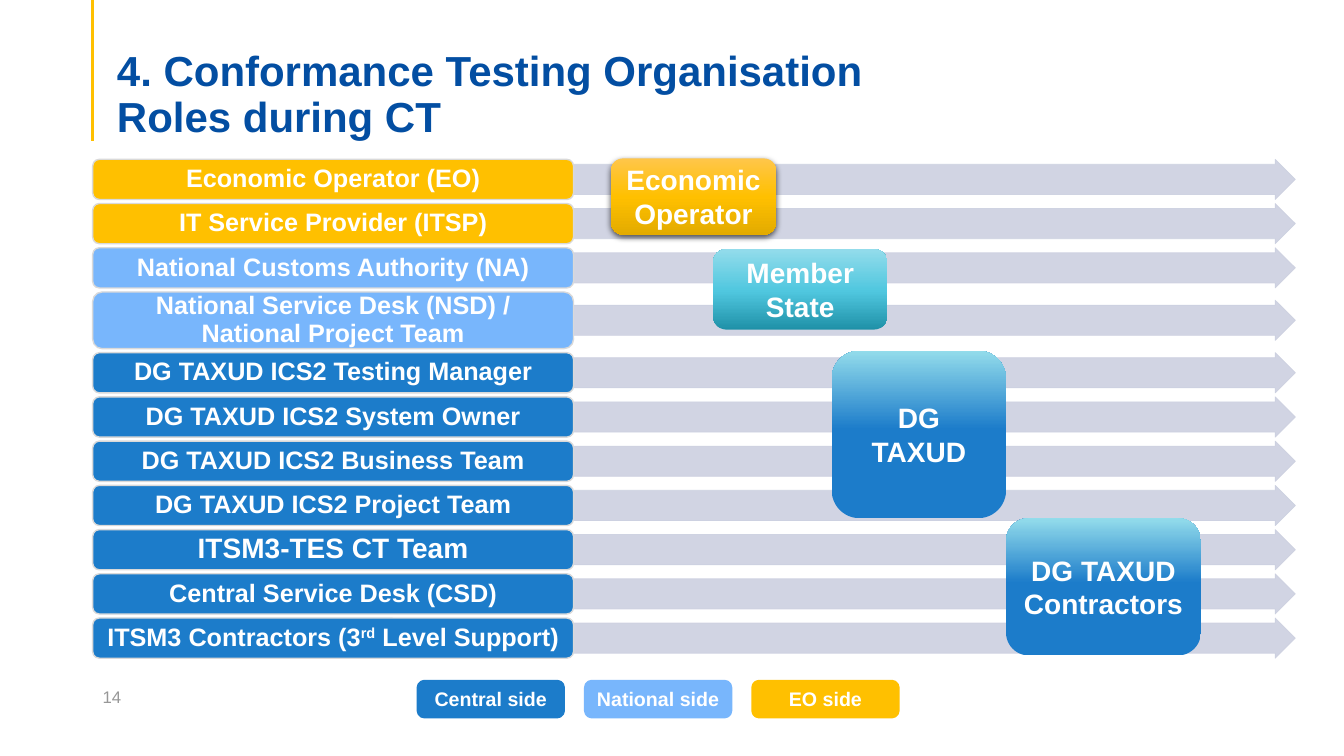
from copy import deepcopy

from lxml.etree import SubElement
from pptx import Presentation
from pptx.dml.color import RGBColor
from pptx.enum.shapes import MSO_CONNECTOR as Link, MSO_SHAPE as Form
from pptx.enum.text import MSO_ANCHOR as Anchor, MSO_AUTO_SIZE as Fit, PP_ALIGN as Align
from pptx.oxml.ns import qn
from pptx.util import Inches, Pt

COLOURS = {
    "central": "1C7CCA", "national": "78B6FC", "eo": "FFC000", "arrow": "CCD0E0",
    "edge": "D9D9D9", "white": "FFFFFF", "title": "034EA2", "number": "979797",
    "sky": "93DCEB", "teal": "50C7DF", "deep teal": "1F91A8",
    "light gold": "FFC64B", "dark gold": "E3AB00",
}
FORMATS = {
    "title": {
        "frame": {"vertical_anchor": Anchor.BOTTOM, "margin_bottom": 0},
        "para": {"alignment": Align.LEFT, "line_spacing": 0.9},
        "font": {"size": Pt(30), "bold": True}},
    "number": {
        "frame": {"vertical_anchor": Anchor.MIDDLE},
        "para": {"alignment": Align.LEFT},
        "font": {"size": Pt(12), "bold": False}},
    "role": {
        "frame": {"vertical_anchor": Anchor.MIDDLE, "margin_left": Pt(6), "margin_right": Pt(6),
                  "margin_top": Pt(3), "margin_bottom": Pt(3)},
        "para": {"alignment": Align.CENTER, "line_spacing": 0.9},
        "font": {"size": Pt(18), "bold": True}},
    "party": {
        "frame": {"vertical_anchor": Anchor.MIDDLE},
        "para": {"alignment": Align.CENTER},
        "font": {"size": Pt(20), "bold": True}},
    "legend": {
        "frame": {"vertical_anchor": Anchor.MIDDLE, "margin_left": Pt(2), "margin_right": Pt(2),
                  "margin_top": 0, "margin_bottom": 0},
        "para": {"alignment": Align.CENTER},
        "font": {"size": Pt(14), "bold": True}},
}
ROLES = [
    ("Economic Operator (EO)", "eo"),
    ("IT Service Provider (ITSP)", "eo"),
    ("National Customs Authority (NA)", "national"),
    ("National Service Desk (NSD) / National Project Team", "national"),
    ("DG TAXUD ICS2 Testing Manager", "central"),
    ("DG TAXUD ICS2 System Owner", "central"),
    ("DG TAXUD ICS2 Business Team", "central"),
    ("DG TAXUD ICS2 Project Team", "central"),
    ("ITSM3-TES CT Team", "central"),
    ("Central Service Desk (CSD)", "central"),
    ("ITSM3 Contractors (3^rd^ Level Support)", "central"),
]
TALL_ROLE, LARGE_ROLE = 3, 8
BLUE_FADE = [(0, "central"), (0.53, "central"), (1, "sky")]
PARTIES = [
    ("Member State", (53.05, 32.95, 12.98, 10.65),
     [(0, "deep teal"), (0.48, "teal"), (1, "sky")], 90),
    ("Economic Operator", (45.45, 20.95, 12.3, 10.1),
     [(0, "light gold"), (0.5, "eo"), (1, "dark gold")], 270),
    ("DG TAXUD", (61.88, 46.4, 12.98, 22.15), BLUE_FADE, 90),
    ("DG TAXUD\nContractors", (74.85, 68.55, 14.5, 18.15), BLUE_FADE, 90),
]
LEGEND = [("Central side", "central"), ("National side", "national"), ("EO side", "eo")]


def colour(name):
    return RGBColor.from_string(COLOURS[name])


def assign(target, values):
    for key, value in values.items():
        setattr(target, key, value)


class RolesSlide:
    """Draws elements on one slide, with lengths as percentages of its size."""

    def __init__(self, deck, font="Arial"):
        self.deck, self.font = deck, font
        self.page = deck.slides.add_slide(deck.slide_layouts[5])

    def place(self, left, top, width, height):
        x, y = self.deck.slide_width / 100, self.deck.slide_height / 100
        return [round(v) for v in (left * x, top * y, width * x, height * y)]

    def add_text(self, box, text, kind, ink="white", **changes):
        style = FORMATS[kind]
        frame = box.text_frame
        assign(frame, {"word_wrap": True, "auto_size": Fit.NONE, **style["frame"]})
        for index, line in enumerate(text.split("\n")):
            para = frame.add_paragraph() if index else frame.paragraphs[0]
            assign(para, {"space_before": Pt(0), **style["para"]})
            for order, part in enumerate(line.split("^")):
                span = para.add_run()
                span.text = part
                assign(span.font, {"name": self.font, **style["font"], **changes})
                span.font.color.rgb = colour(ink)
                if order % 2:
                    span.font._rPr.set("baseline", "30000")

    def title(self, text, area):
        box = self.page.shapes.title
        assign(box, dict(zip(("left", "top", "width", "height"), self.place(*area))))
        self.add_text(box, text, "title", "title")

    def label(self, text, area, kind, ink):
        self.add_text(self.page.shapes.add_textbox(*self.place(*area)), text, kind, ink)

    def rule(self, left, top, height, ink, weight):
        x, y, _, drop = self.place(left, top, 0, height)
        line = self.page.shapes.add_connector(Link.STRAIGHT, x, y, x, y + drop)
        line.line.color.rgb, line.line.width = colour(ink), Pt(weight)
        SubElement(line._element.spPr, qn("a:effectLst"))

    def shape(self, form, area, fill, edge=None, weight=1):
        box = self.page.shapes.add_shape(form, *self.place(*area))
        box.shadow.inherit = False
        if fill:
            box.fill.solid()
            box.fill.fore_color.rgb = colour(fill)
        if edge:
            box.line.color.rgb, box.line.width = colour(edge), Pt(weight)
        else:
            box.line.fill.background()
        return box

    def arrow(self, area):
        box = self.shape(Form.RIGHT_ARROW, area, "arrow", "arrow", 0.5)
        box.adjustments[0] = 0.75
        for tint in box._element.spPr.iter(qn("a:srgbClr")):
            SubElement(tint, qn("a:alpha"), val="90000")

    def bar(self, text, area, kind, fill, edge, weight, **changes):
        box = self.shape(Form.ROUNDED_RECTANGLE, area, fill, edge, weight)
        self.add_text(box, text, kind, **changes)

    def party(self, text, area, fade, angle):
        box = self.shape(Form.ROUNDED_RECTANGLE, area, None)
        box.fill.gradient()
        box.fill.gradient_angle = angle
        stops = box._element.spPr.find(qn("a:gradFill")).find(qn("a:gsLst"))
        stops.append(deepcopy(stops[-1]))
        for stop, (position, name) in zip(box.fill.gradient_stops, fade):
            stop.position, stop.color.rgb = position, colour(name)
        self.add_text(box, text, "party")
        return box

    def drop_shadow(self, box):
        effects = box._element.spPr.find(qn("a:effectLst"))
        shadow = SubElement(effects, qn("a:outerShdw"), blurRad=str(Pt(4.5)),
                            dist=str(Pt(1.5)), dir="5400000", rotWithShape="0")
        tint = SubElement(shadow, qn("a:srgbClr"), val="000000")
        SubElement(tint, qn("a:alpha"), val="63000")


def main():
    deck = Presentation()
    deck.slide_width, deck.slide_height = Inches(13.33), Inches(7.5)
    slide = RolesSlide(deck)
    slide.rule(6.9, 0, 18.67, "eo", 2.25)
    slide.title("4. Conformance Testing Organisation\nRoles during CT", (7.95, 7.2, 86.27, 11.47))
    slide.label("14", (6.9, 89.47, 22.5, 5.33), "number", "number")

    left, top, width, height, gap = 6.9, 21.07, 35.78, 5.32, 0.53
    for index, (role, side) in enumerate(ROLES):
        tall = 7.5 if index == TALL_ROLE else height
        slide.arrow((left + width, top + (tall - height) / 2, 53.7, height))
        slide.bar(role, (left, top, width, tall), "role", side, "edge", 1,
                  size=Pt(20 if index == LARGE_ROLE else 18))
        top += tall + gap

    for text, area, fade, angle in PARTIES:
        box = slide.party(text, area, fade, angle)
        if text == "Economic Operator":
            slide.drop_shadow(box)

    for index, (text, side) in enumerate(LEGEND):
        slide.bar(text, (31.16 + 12.45 * index, 90.2, 10.72, 4.55), "legend", side, side, 3)
    deck.save("out.pptx")


if __name__ == "__main__":
    main()
